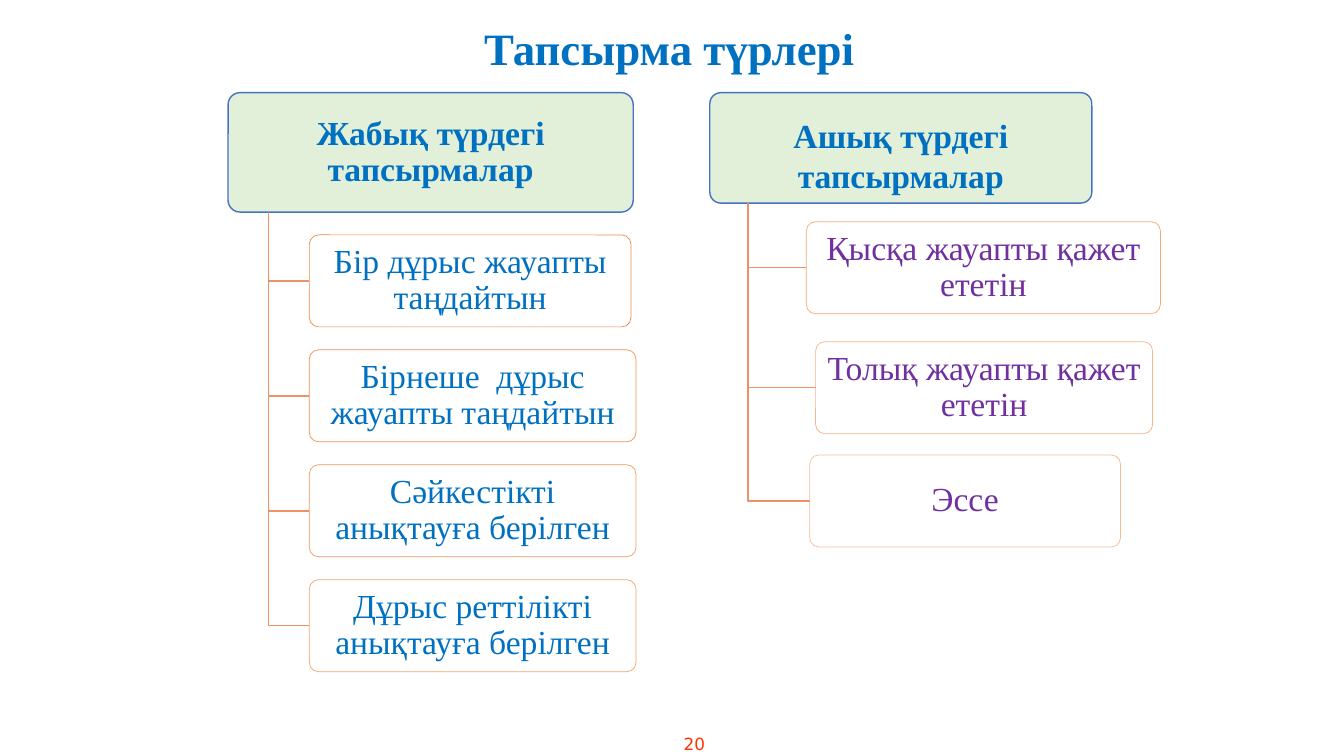
from lxml.etree import SubElement
from pptx import Presentation
from pptx.dml.color import RGBColor
from pptx.enum.shapes import MSO_SHAPE
from pptx.enum.text import MSO_ANCHOR, PP_ALIGN
from pptx.oxml.ns import qn
from pptx.util import Pt

SERIF = "Times New Roman"
BLUE, PURPLE, ORANGE = "0070C0", "7030A0", "ED7D31"
CARD_HEIGHT = 65.7
CARD_COUNT = 7

# Each card: left, top, width, text
CLOSED_CARDS = [
    (221, 167.8 + 82.1 * row, width, text)
    for row, (width, text) in enumerate([
        (229.7, "Бір дұрыс жауапты таңдайтын"),
        (233.3, "Бірнеше  дұрыс жауапты таңдайтын"),
        (233.3, "Сәйкестікті анықтауға берілген"),
        (233.3, "Дұрыс реттілікті анықтауға берілген"),
    ])
]
OPEN_CARDS = [
    (576, 158.4, 252.9, "Қысқа жауапты қажет ететін"),
    (582.6, 244.1, 240.7, "Толық жауапты қажет ететін"),
    (578.4, 325, 222, "Эссе"),
]


def color(value):
    return RGBColor.from_string(value)


def set_alpha(fill_element, percent):
    """Make the solid colour under a fill or line element partly transparent."""
    tint = fill_element.find(qn("a:solidFill"))[0]
    SubElement(tint, qn("a:alpha")).set("val", str(round(percent * 1000)))


def write(box, text, size, text_color, font=SERIF, bold=False, spacing=1.0):
    frame = box.text_frame
    frame.word_wrap = True
    frame.vertical_anchor = MSO_ANCHOR.MIDDLE
    para = frame.paragraphs[0]
    para.alignment = PP_ALIGN.CENTER
    para.line_spacing = spacing
    span = para.add_run()
    span.text = text
    span.font.name = font
    span.font.size = Pt(size)
    span.font.bold = bold
    span.font.color.rgb = color(text_color)


def add_label(page, left, top, width, height, text, *style, **options):
    box = page.shapes.add_textbox(Pt(left), Pt(top), Pt(width), Pt(height))
    write(box, text, *style, **options)


def add_round_box(page, left, top, width, height, fill, line, line_width):
    box = page.shapes.add_shape(MSO_SHAPE.ROUNDED_RECTANGLE,
                                Pt(left), Pt(top), Pt(width), Pt(height))
    box.adjustments[0] = 0.1
    box.shadow.inherit = False
    box.fill.solid()
    box.fill.fore_color.rgb = color(fill)
    box.line.color.rgb = color(line)
    box.line.width = Pt(line_width)
    frame = box.text_frame
    frame.margin_left = frame.margin_right = Pt(3.6)
    frame.margin_top = frame.margin_bottom = Pt(2.2)
    return box


def add_header(page, left, top, width, height, text, spacing, text_drop):
    box = add_round_box(page, left, top, width, height, "E2F0D9", "4472C4", 1)
    box.text_frame.margin_top = Pt(2.2 + text_drop)
    write(box, text, 24, BLUE, bold=True, spacing=spacing)


def add_elbow(page, trunk, top, right, bottom):
    """Draw a line down the trunk and across to a card."""
    builder = page.shapes.build_freeform(Pt(trunk), Pt(top))
    builder.add_line_segments([(Pt(trunk), Pt(bottom)), (Pt(right), Pt(bottom))],
                              close=False)
    elbow = builder.convert_to_shape()
    elbow.shadow.inherit = False
    elbow.fill.background()
    elbow.line.color.rgb = color("EF9166")
    elbow.line.width = Pt(1)


def add_card(page, left, top, width, text, text_color, line_alpha):
    box = add_round_box(page, left, top, width, CARD_HEIGHT, "FFFFFF", ORANGE, 0.5)
    properties = box.fill._xPr
    set_alpha(properties, 90)
    set_alpha(properties.find(qn("a:ln")), line_alpha)
    write(box, text, 24, text_color, spacing=0.9)


def add_branch(page, header, cards, text_color, first_index, spacing=0.9, text_drop=0):
    """Add a header and its cards; card outlines fade from 90 to 50 percent."""
    left, top, width, height, text = header
    add_header(page, left, top, width, height, text, spacing, text_drop)
    for index, (card_left, card_top, card_width, card_text) in enumerate(cards, first_index):
        add_elbow(page, left + width / 10, top + height,
                  card_left, card_top + CARD_HEIGHT / 2)
        add_card(page, card_left, card_top, card_width, card_text, text_color,
                 90 - 40 * index / (CARD_COUNT - 1))


def main():
    deck = Presentation()
    deck.slide_width, deck.slide_height = Pt(960), Pt(540)
    page = deck.slides.add_slide(deck.slide_layouts[6])
    add_label(page, 240, 522, 512, 18, "20", 12, "FF3300", font="DejaVu Sans")
    add_label(page, -2, 13.7, 960, 40, "Тапсырма түрлері", 32, BLUE, bold=True)
    add_branch(page, (162.9, 66.2, 289.4, 85.3, "Жабық түрдегі тапсырмалар"),
               CLOSED_CARDS, BLUE, 0)
    add_branch(page, (507, 66.2, 272.9, 78.9, "Ашық түрдегі тапсырмалар"),
               OPEN_CARDS, PURPLE, len(CLOSED_CARDS), spacing=1.0, text_drop=10)
    deck.save("out.pptx")


if __name__ == "__main__":
    main()
